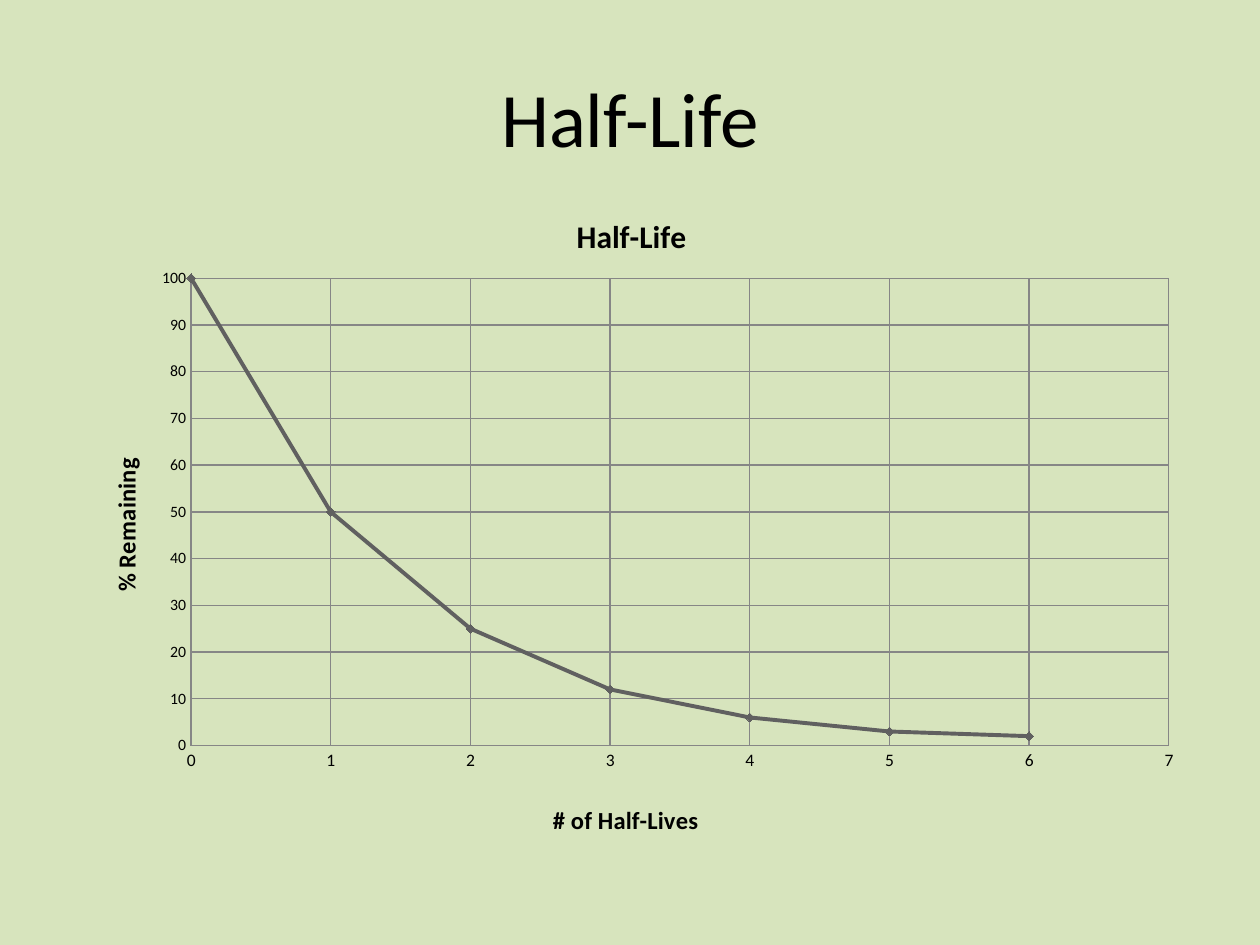
from lxml import etree
from pptx import Presentation
from pptx.chart.data import XyChartData
from pptx.dml.color import RGBColor
from pptx.enum.chart import XL_CHART_TYPE, XL_MARKER_STYLE, XL_TICK_MARK
from pptx.enum.text import MSO_ANCHOR, PP_ALIGN
from pptx.oxml.ns import qn
from pptx.util import Inches, Pt

SMOOTH = XL_CHART_TYPE.XY_SCATTER_SMOOTH
DIAMOND = XL_MARKER_STYLE.DIAMOND
NO_TICK = XL_TICK_MARK.NONE
MIDDLE = MSO_ANCHOR.MIDDLE
CENTER = PP_ALIGN.CENTER

FONT = "Calibri"
COLORS = {"bg": "D7E4BD", "text": "000000", "grid": "868686", "curve": "606060"}
REMAINING = [100, 50, 25, 12, 6, 3, 2]


class SlideBuilder:
    def __init__(self, slide):
        self.s = slide
        fill = slide.background.fill
        fill.solid()
        fill.fore_color.rgb = self.color("bg")

    def color(self, name):
        return RGBColor.from_string(COLORS[name])

    def style_font(self, font, size, bold=False):
        font.name = FONT
        font.size = Pt(size)
        font.bold = bold
        font.color.rgb = self.color("text")

    def style_line(self, line, name, width):
        line.color.rgb = self.color(name)
        line.width = Pt(width)

    def heading(self, text, box, size):
        tf = self.s.shapes.add_textbox(*map(Inches, box)).text_frame
        tf.word_wrap = True
        tf.vertical_anchor = MIDDLE
        p = tf.paragraphs[0]
        p.text = text
        p.alignment = CENTER
        self.style_font(p.runs[0].font, size)

    def place(self, parent, index, box, frame, inner=False):
        for old in parent.findall(qn("c:layout")):
            parent.remove(old)
        layout = etree.Element(qn("c:layout"))
        manual = etree.SubElement(layout, qn("c:manualLayout"))
        left, top, width, height = frame
        settings = [("layoutTarget", "inner")] if inner else []
        settings += [("xMode", "edge"), ("yMode", "edge")]
        sizes = (box[0] - left) / width, (box[1] - top) / height
        if inner:
            sizes += box[2] / width, box[3] / height
        settings += [(key, f"{size:.3f}") for key, size in zip("xywh", sizes)]
        for key, value in settings:
            etree.SubElement(manual, qn(f"c:{key}")).set("val", value)
        parent.insert(index, layout)

    def chart_title(self, title, text, size, spot, frame):
        p = title.text_frame.paragraphs[0]
        p.text = text
        self.style_font(p.runs[0].font, size, bold=True)
        self.place(title._element, 1, spot, frame)

    def axis(self, axis, title, spot, frame, limit, step, size):
        axis.minimum_scale = 0
        axis.maximum_scale = limit
        axis.major_unit = step
        axis.major_tick_mark = axis.minor_tick_mark = NO_TICK
        axis.has_major_gridlines = True
        self.style_line(axis.major_gridlines.format.line, "grid", 0.75)
        self.style_line(axis.format.line, "grid", 0.75)
        self.style_font(axis.tick_labels.font, size)
        axis.tick_labels.number_format = "General"
        axis.tick_labels.number_format_is_linked = False
        self.chart_title(axis.axis_title, title, 14, spot, frame)

    def decay_chart(self, values, frame, plot_box):
        data = XyChartData()
        points = data.add_series("Series 1")
        for x, y in enumerate(values):
            points.add_data_point(x, y)
        chart = self.s.shapes.add_chart(SMOOTH, *map(Inches, frame), data).chart
        self.style_font(chart.font, 10)
        chart.has_legend = False
        chart.has_title = True
        self.chart_title(chart.chart_title, "Half-Life", 18, (4.53, 1.66), frame)
        self.axis(chart.category_axis, "# of Half-Lives", (4.35, 6.34), frame, 7, 1, 10)
        self.axis(chart.value_axis, "% Remaining", (0.83, 3.6), frame, 100, 10, 9)
        plot = chart.plots[0]
        plot.vary_by_categories = False
        series = plot.series[0]
        series.smooth = True
        self.style_line(series.format.line, "curve", 2.25)
        series.marker.style = DIAMOND
        series.marker.size = 5
        series.marker.format.fill.solid()
        series.marker.format.fill.fore_color.rgb = self.color("curve")
        self.style_line(series.marker.format.line, "curve", 0.75)
        plot_area = chart._chartSpace.chart.plotArea
        self.place(plot_area, 0, plot_box, frame, inner=True)


def main():
    prs = Presentation()
    prs.slide_width = Inches(10)
    prs.slide_height = Inches(7.5)
    builder = SlideBuilder(prs.slides.add_slide(prs.slide_layouts[6]))
    builder.heading("Half-Life", (0.5, 0.3, 9, 1.25), 44)
    builder.decay_chart(REMAINING, (0.58, 1.42, 8.92, 5.33), (1.52, 2.21, 7.76, 3.71))
    prs.save("out.pptx")


if __name__ == "__main__":
    main()
